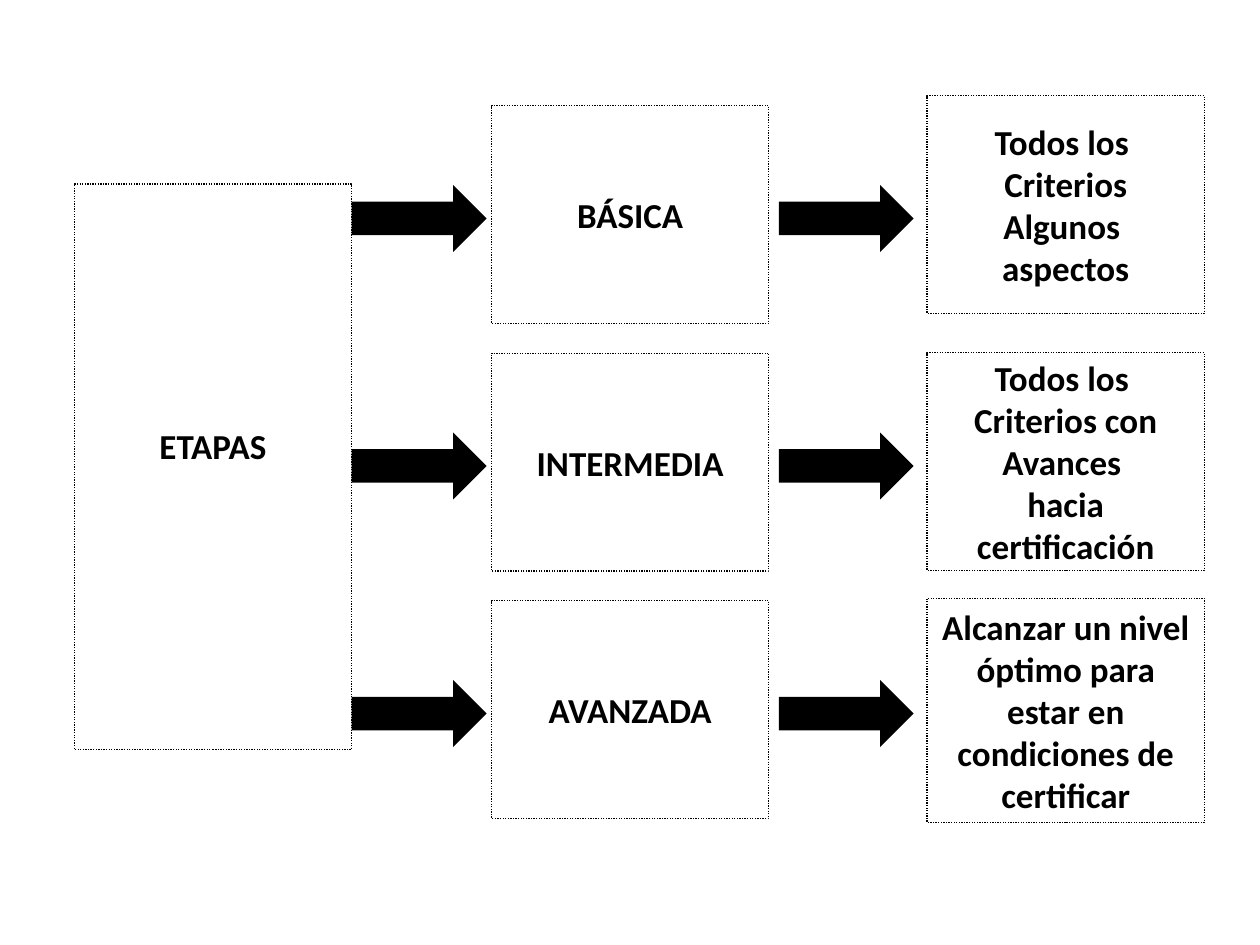
from pptx import Presentation
from pptx import util as u
from pptx.dml import color
from pptx.enum import dml, shapes, text

FONT = {"name": "Calibri", "size": u.Pt(20), "bold": True}
FRAME = {"vertical_anchor": text.MSO_ANCHOR.MIDDLE, "word_wrap": False}
LINE = {"width": u.Pt(0.75), "dash_style": dml.MSO_LINE.ROUND_DOT}


def tint(fmt, code):
    fmt.rgb = color.RGBColor.from_string(code)


def apply(item, vals):
    for key, val in vals.items():
        setattr(item, key, val)


class Deck:
    ink = "000000"
    paper = "FFFFFF"

    def __init__(self, slide):
        self.slide = slide

    def shape(self, kind, area, fill):
        item = self.slide.shapes.add_shape(kind, *map(u.Cm, area))
        item.shadow.inherit = False
        item.fill.solid()
        tint(item.fill.fore_color, fill)
        return item

    def box(self, area, lines, **frame):
        item = self.shape(shapes.MSO_SHAPE.RECTANGLE, area, self.paper)
        item.line.fill.solid()
        tint(item.line.color, self.ink)
        apply(item.line, LINE)
        body = item.text_frame
        body.text = "\n".join(lines)
        apply(body, FRAME | frame)
        for para in body.paragraphs:
            para.alignment = text.PP_ALIGN.CENTER
            for run in para.runs:
                apply(run.font, FONT)
                tint(run.font.color, self.ink)

    def arrow(self, left, top):
        area = left, top, 2.72, 1.35
        item = self.shape(shapes.MSO_SHAPE.RIGHT_ARROW, area, self.ink)
        item.line.fill.background()


def main():
    show = Presentation()
    apply(show, {"slide_width": u.Cm(25.4), "slide_height": u.Cm(19.05)})
    deck = Deck(show.slides.add_slide(show.slide_layouts[6]))
    wide, high, first, pitch = 5.59, 4.39, 2.13, 4.99

    deck.box((1.5, 3.71, wide, 11.4), ["ETAPAS"], margin_bottom=u.Cm(0.99))
    goals = [
        ("BÁSICA", 1.93, high,
         ["Todos los ", "Criterios", "Algunos ", "aspectos"], {}),
        ("INTERMEDIA", 7.11, high,
         ["Todos los ", "Criterios con", "Avances ", "hacia",
          "certificación"], {}),
        ("AVANZADA", 12.06, 4.52,
         ["Alcanzar un nivel óptimo para estar en condiciones de certificar"],
         {"word_wrap": True,
          "auto_size": text.MSO_AUTO_SIZE.SHAPE_TO_FIT_TEXT}),
    ]
    for row, (stage, top, tall, lines, frame) in enumerate(goals):
        base = first + row * pitch
        deck.box((9.91, base, wide, high), [stage])
        deck.box((18.69, top, wide, tall), lines, **frame)
        for left in (7.09, 15.7):
            deck.arrow(left, base + 1.6)

    show.save("out.pptx")


if __name__ == "__main__":
    main()
